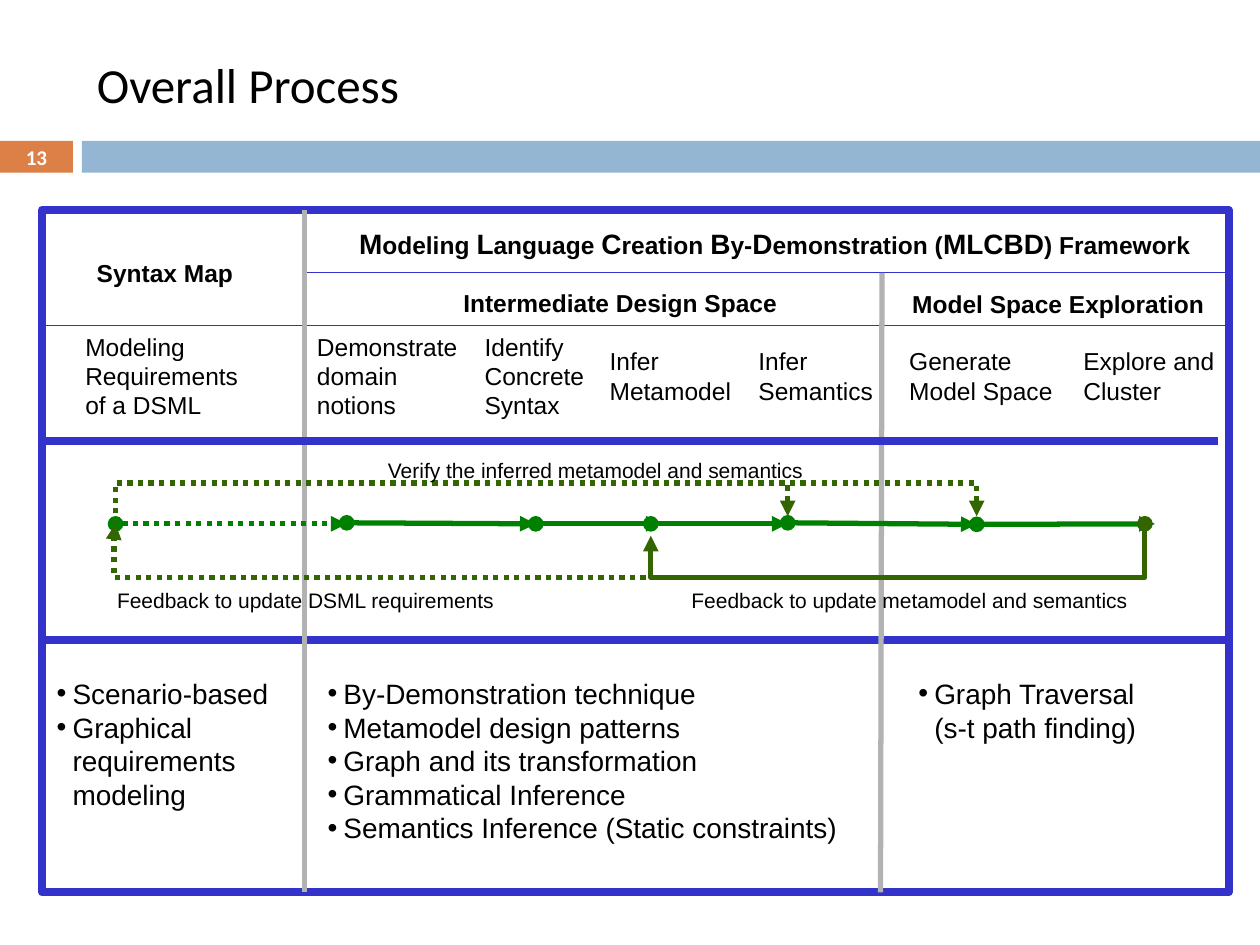
import pptx
import pptx.util
import pptx.dml.color
import pptx.enum.dml
import pptx.enum.shapes
import pptx.enum.text
import pptx.oxml
import pptx.oxml.ns
import lxml.etree

Cm = pptx.util.Cm
Pt = pptx.util.Pt
qn = pptx.oxml.ns.qn
BLUE, GRAY, GREEN, OLIVE, BLACK = "3333CC", "B2B2B2", "008000", "336600", "000000"


def paint(target, color):
    if hasattr(target, "solid"):
        target.solid()
        target = target.fore_color
    else:
        target = target.color
    target.rgb = pptx.dml.color.RGBColor.from_string(color)


def style_line(shape, color, width, dotted=False, head=None, tail=None):
    paint(shape.line.fill, color)
    shape.line.width = Pt(width)
    if dotted:
        shape.line.dash_style = pptx.enum.dml.MSO_LINE.ROUND_DOT
    properties = shape._element.spPr
    outline = properties.find(qn("a:ln"))
    for tag, kind in (("a:headEnd", head), ("a:tailEnd", tail)):
        if kind:
            lxml.etree.SubElement(outline, qn(tag), type=kind)
    if properties.find(qn("a:effectLst")) is None:
        lxml.etree.SubElement(properties, qn("a:effectLst"))


presentation = pptx.Presentation()
presentation.slide_width = Cm(25.4)
presentation.slide_height = Cm(19.05)
slide = presentation.slides.add_slide(presentation.slide_layouts[4])
shapes = slide.shapes
placeholders = {shape.placeholder_format.idx: shape for shape in slide.placeholders}
unused = placeholders[3]._element
unused.getparent().remove(unused)

title = shapes.title
title.left, title.top, title.width, title.height = Cm(1.7), Cm(0.64), Cm(22.66), Cm(2.11)
title.text_frame.text = "Overall Process"
title.text_frame.vertical_anchor = pptx.enum.text.MSO_ANCHOR.MIDDLE
paragraph = title.text_frame.paragraphs[0]
paragraph.alignment = pptx.enum.text.PP_ALIGN.LEFT
paragraph.font.name = "Calibri"
paragraph.font.size = Pt(28)
paint(paragraph.font, BLACK)

for left, width, color, text in ((0, 1.47, "DD8047", "13"), (1.65, 23.75, "94B6D2", "")):
    bar = shapes.add_shape(pptx.enum.shapes.MSO_SHAPE.RECTANGLE, Cm(left), Cm(2.84), Cm(width), Cm(0.64))
    bar.shadow.inherit = False
    paint(bar.fill, color)
    bar.line.fill.background()
    if text:
        bar.text_frame.text = text
        paragraph = bar.text_frame.paragraphs[0]
        paragraph.alignment = pptx.enum.text.PP_ALIGN.CENTER
        paragraph.font.name = "Calibri"
        paragraph.font.size = Pt(12)
        paragraph.font.bold = True
        paint(paragraph.font, "FFFFFF")

frame = shapes.add_shape(pptx.enum.shapes.MSO_SHAPE.RECTANGLE, Cm(0.85), Cm(4.23), Cm(23.92), Cm(13.76))
frame.shadow.inherit = False
frame.fill.background()
style_line(frame, BLUE, 4.5)

rules = [
    (0.85, 6.56, 24.77, 6.56, BLUE, 0.75),
    (6.14, 5.5, 24.77, 5.5, BLUE, 0.75),
    (0.85, 12.91, 24.77, 12.91, BLUE, 4.5),
    (6.14, 4.23, 6.14, 17.99, GRAY, 3),
    (17.78, 5.5, 17.75, 17.99, GRAY, 3),
    (0.85, 8.89, 24.55, 8.89, BLUE, 4.5),
]
for x1, y1, x2, y2, color, width in rules:
    rule = shapes.add_connector(pptx.enum.shapes.MSO_CONNECTOR.STRAIGHT, Cm(x1), Cm(y1), Cm(x2), Cm(y2))
    style_line(rule, color, width)

steps = [
    (2.33, 10.56, 6.99, 10.56),
    (6.99, 10.54, 10.8, 10.56),
    (10.8, 10.56, 13.34, 10.56),
    (13.12, 10.56, 15.88, 10.56),
    (15.88, 10.54, 19.69, 10.57),
    (19.69, 10.57, 23.28, 10.56),
]
for index, (x1, y1, x2, y2) in enumerate(steps):
    step = shapes.add_connector(pptx.enum.shapes.MSO_CONNECTOR.STRAIGHT, Cm(x1), Cm(y1), Cm(x2), Cm(y2))
    style_line(step, GREEN, 3, index == 0, "oval", "triangle")

loops = [
    ([(23.08, 10.56), (23.08, 11.64), (13.12, 11.64), (13.12, 10.8)], False, "oval"),
    ([(2.33, 10.56), (2.33, 9.74), (19.69, 9.74), (19.69, 10.41)], True, None),
    ([(2.33, 10.56), (2.33, 9.74), (15.88, 9.74), (15.88, 10.41)], True, None),
]
for points, dotted, head in loops:
    corners = [(Cm(x), Cm(y)) for x, y in points]
    builder = shapes.build_freeform(*corners[0])
    builder.add_line_segments(corners[1:], close=False)
    loop = builder.convert_to_shape()
    loop.shadow.inherit = False
    loop.fill.background()
    style_line(loop, OLIVE, 3, dotted, head, "triangle")

feedback = shapes.add_connector(pptx.enum.shapes.MSO_CONNECTOR.ELBOW, Cm(13.23), Cm(11.64), Cm(2.33), Cm(10.56))
style_line(feedback, OLIVE, 3, True, None, "triangle")
geometry = feedback._element.spPr.find(qn("a:prstGeom"))
lxml.etree.SubElement(geometry.find(qn("a:avLst")), qn("a:gd"), name="adj1", fmla="val 100300")

labels = [
    (1.7, 5.08, 3.28, 0.86, "Syntax Map", 14, True, False),
    (9.09, 5.69, 6.86, 0.86, "Intermediate Design Space", 14, True, False),
    (18.14, 5.71, 6.43, 0.86, "Model Space Exploration", 14, True, False),
    (1.47, 6.56, 3.96, 2.06, "Modeling Requirements of a DSML", 14, False, True),
    (6.14, 6.56, 3.38, 2.06, "Demonstrate domain\vnotions", 14, False, True),
    (9.52, 6.56, 2.74, 2.06, "Identify \vConcrete Syntax", 14, False, True),
    (12.04, 6.86, 3.2, 1.45, "Infer Metamodel", 14, False, True),
    (15.04, 6.86, 3.2, 1.45, "Infer Semantics", 14, False, True),
    (18.08, 6.86, 3.51, 1.45, "Generate Model Space", 14, False, True),
    (21.59, 6.86, 3.18, 1.45, "Explore and Cluster", 14, False, True),
    (7.57, 9.09, 8.94, 0.76, "Verify the inferred metamodel and semantics", 12, False, False),
    (2.11, 11.71, 8.18, 0.76, "Feedback to update DSML requirements", 12, False, False),
    (13.69, 11.71, 9.37, 0.76, "Feedback to update metamodel and semantics", 12, False, False),
    (6.99, 4.45, 17.35, 0.94, "", 14, True, False),
]
for left, top, width, height, text, size, bold, wrap in labels:
    label = shapes.add_textbox(Cm(left), Cm(top), Cm(width), Cm(height))
    label.text_frame.word_wrap = wrap
    paragraph = label.text_frame.paragraphs[0]
    paragraph.text = text
    paragraph.font.name = "Arial"
    paragraph.font.size = Pt(size)
    paragraph.font.bold = bold
    paint(paragraph.font, BLACK)

framework_heading = paragraph
pieces = ["M", "odeling ", "L", "anguage ", "C", "reation ", "B", "y-", "D", "emonstration (", "MLCBD", ") Framework"]
for index, piece in enumerate(pieces):
    run = framework_heading.add_run()
    run.text = piece
    run.font.size = Pt(14 if index % 2 else 16)

lists = [
    (1, 0.89, 5.26, 3, ["Scenario-based", "Graphical requirements modeling"]),
    (2, 6.35, 11.23, 3.68, [
        "By-Demonstration technique",
        "Metamodel design patterns",
        "Graph and its transformation",
        "Grammatical Inference",
        "Semantics Inference (Static constraints)",
    ]),
    (4, 18.26, 5.87, 2.31, ["Graph Traversal \v(s-t path finding)"]),
]
for placeholder_index, left, width, height, items in lists:
    body = placeholders[placeholder_index]
    body.left, body.top, body.width, body.height = Cm(left), Cm(13.51), Cm(width), Cm(height)
    body.text_frame.text = "\n".join(items)
    body.text_frame.vertical_anchor = pptx.enum.text.MSO_ANCHOR.TOP
    body.text_frame.auto_size = pptx.enum.text.MSO_AUTO_SIZE.NONE
    for paragraph in body.text_frame.paragraphs:
        paragraph.space_before = Pt(0)
        properties = paragraph._p.get_or_add_pPr()
        properties.set("marL", str(Cm(0.32)))
        properties.set("indent", str(-Cm(0.32)))
        lxml.etree.SubElement(properties, qn("a:buFont"), typeface="Arial")
        lxml.etree.SubElement(properties, qn("a:buChar"), char="•")
        paragraph.font.name = "Arial"
        paragraph.font.size = Pt(16)
        paragraph.font.bold = False
        paint(paragraph.font, BLACK)

presentation.save("out.pptx")
